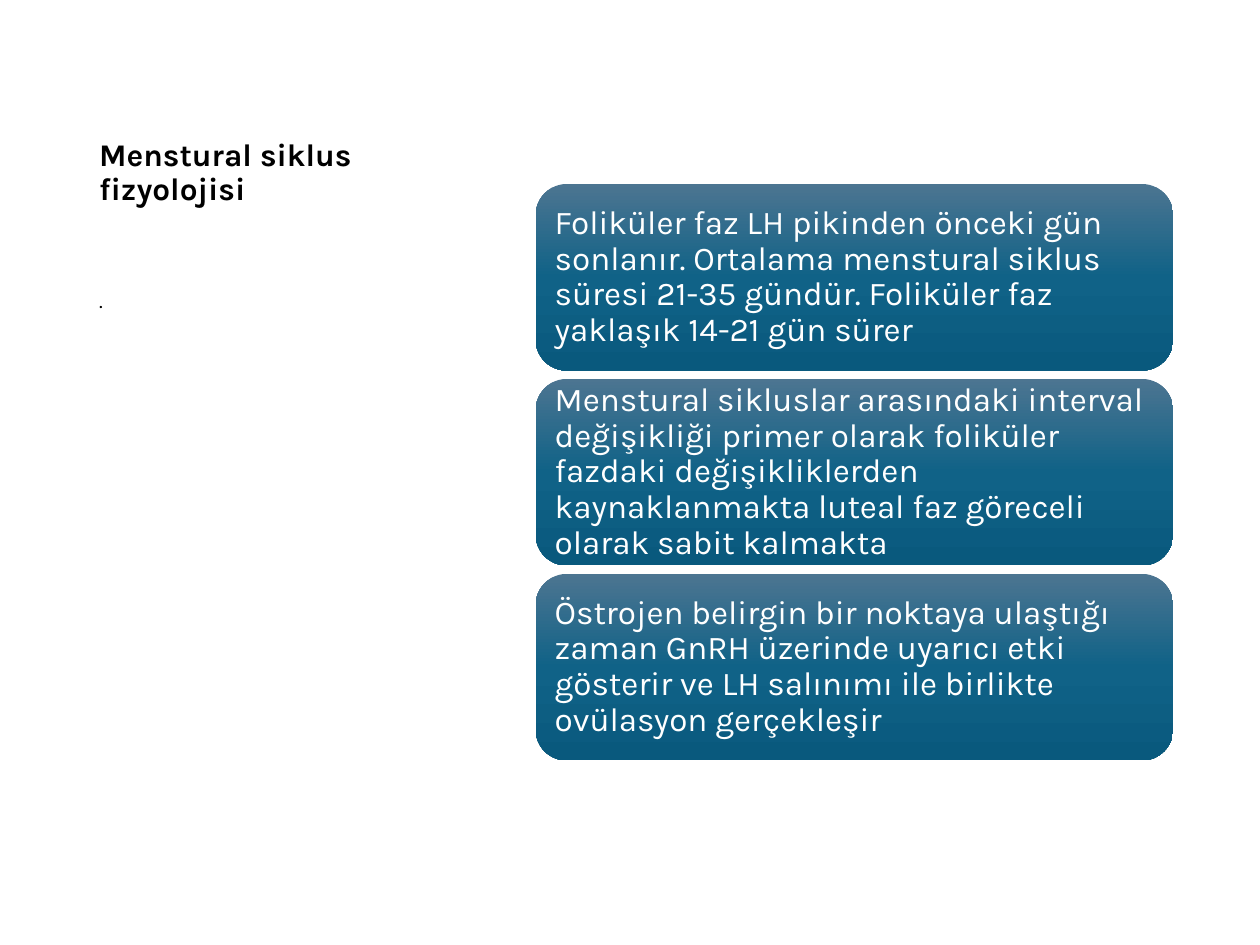
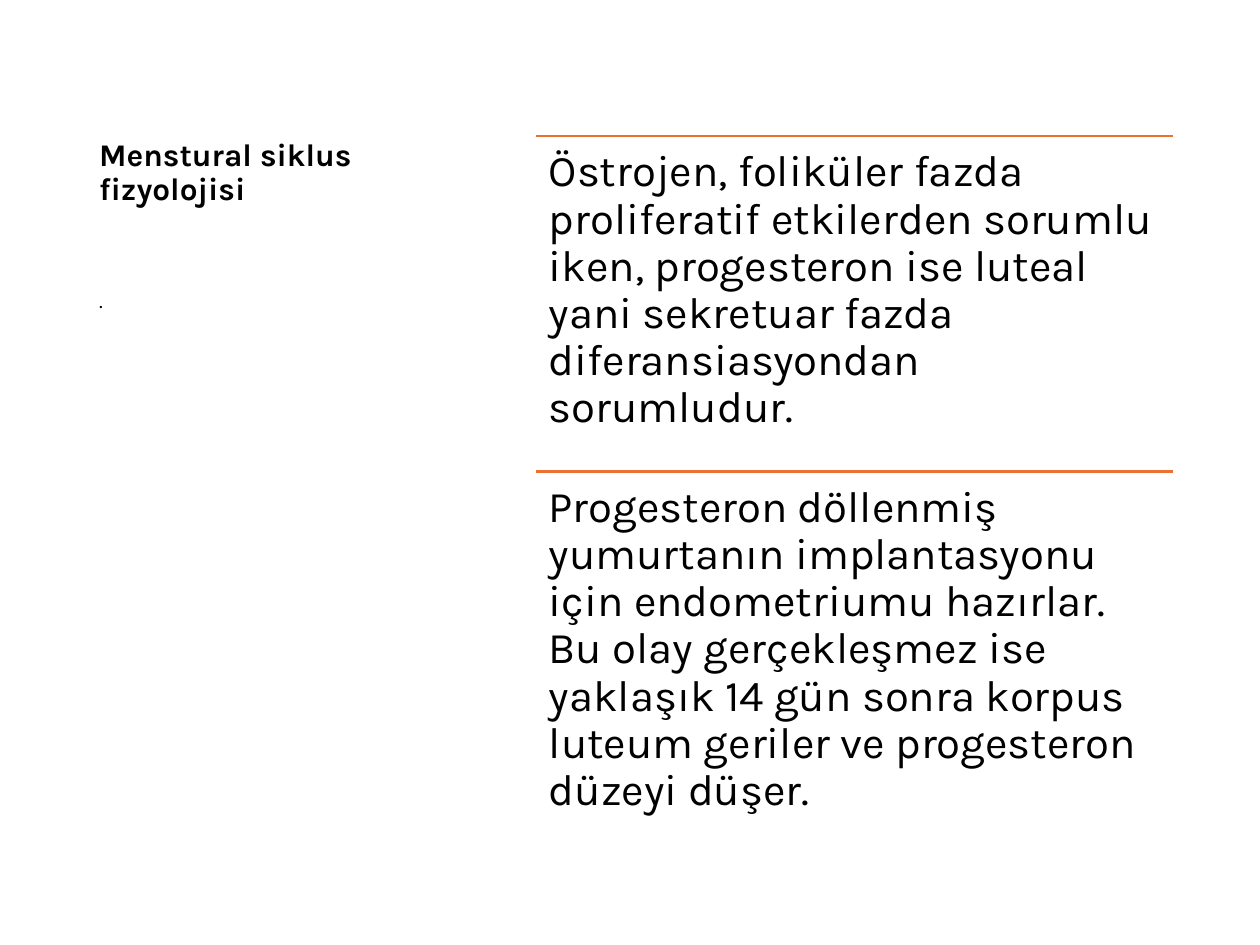
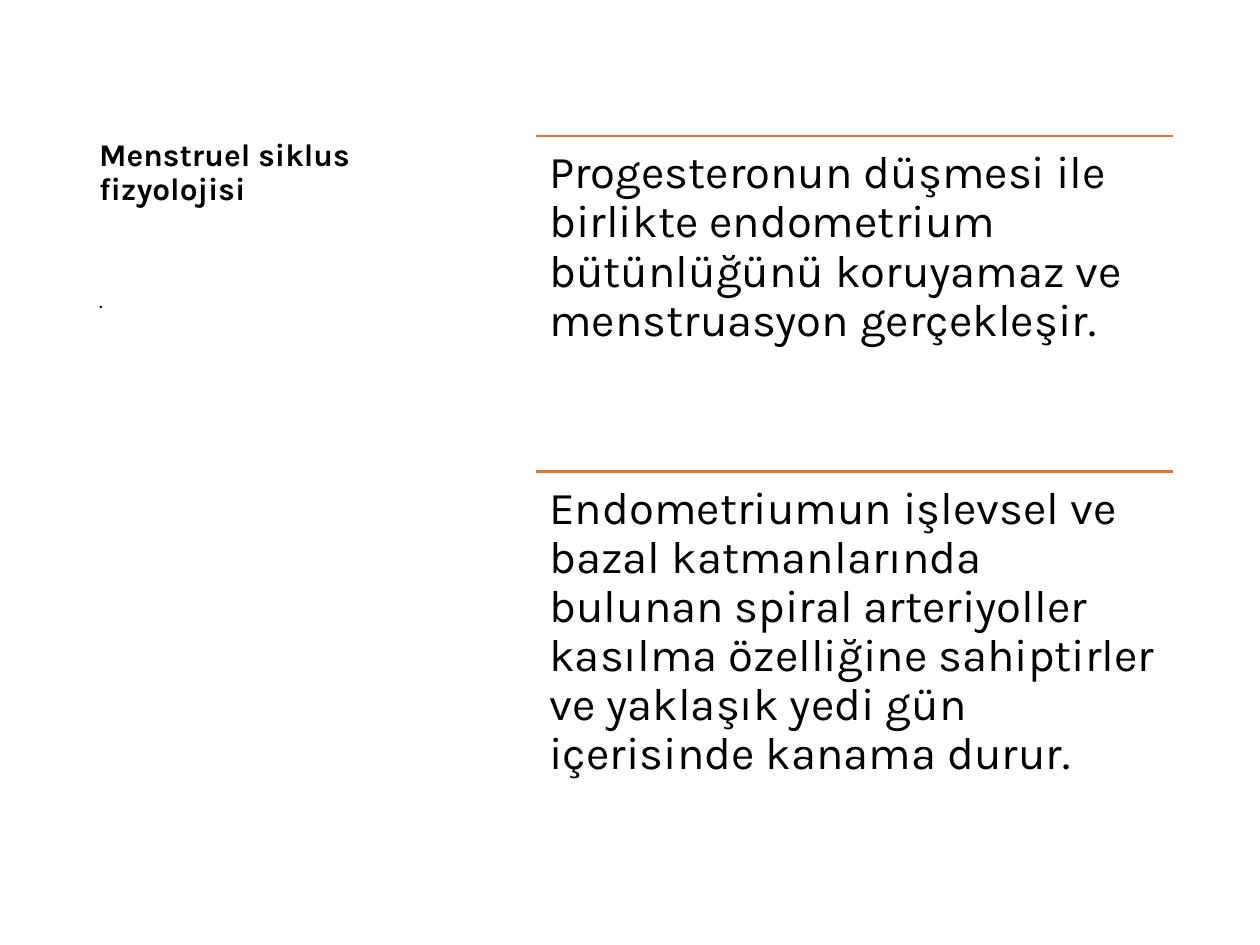
import copy

import pptx
import pptx.dml.color
import pptx.enum.shapes
import pptx.enum.text
import pptx.util
from lxml import etree
from pptx.oxml.ns import qn
from pptx.util import Cm, Pt

SLIDES = [
    {
        "title": "Menstural siklus fizyolojisi",
        "kind": "cards",
        "size": 19,
        "texts": [
            "Foliküler faz LH pikinden önceki gün sonlanır. Ortalama menstural "
            "siklus süresi 21-35 gündür. Foliküler faz yaklaşık 14-21 gün sürer",
            "Menstural sikluslar arasındaki interval değişikliği primer olarak "
            "foliküler fazdaki değişikliklerden kaynaklanmakta luteal faz "
            "göreceli olarak sabit kalmakta",
            "Östrojen belirgin bir noktaya ulaştığı zaman GnRH üzerinde uyarıcı "
            "etki gösterir ve LH salınımı ile birlikte ovülasyon gerçekleşir",
        ],
    },
    {
        "title": "Menstural siklus fizyolojisi",
        "kind": "ruled",
        "size": 25,
        "texts": [
            "Östrojen, foliküler fazda proliferatif etkilerden sorumlu iken, "
            "progesteron ise luteal yani sekretuar fazda diferansiasyondan "
            "sorumludur.",
            "Progesteron döllenmiş yumurtanın implantasyonu için endometriumu "
            "hazırlar. Bu olay gerçekleşmez ise yaklaşık 14 gün sonra korpus "
            "luteum geriler ve progesteron düzeyi düşer.",
        ],
    },
    {
        "title": "Menstruel siklus fizyolojisi",
        "kind": "ruled",
        "size": 26,
        "texts": [
            "Progesteronun düşmesi ile birlikte endometrium bütünlüğünü "
            "koruyamaz ve menstruasyon gerçekleşir.",
            "Endometriumun işlevsel ve bazal katmanlarında bulunan spiral "
            "arteriyoller kasılma özelliğine sahiptirler ve yaklaşık yedi gün "
            "içerisinde kanama durur.",
        ],
    },
]
NOTE = "."

COLORS = {
    "ink": "000000",
    "light": "FFFFFF",
    "rule": "E97132",
    "top": "4C7591",
    "mid": "106287",
    "base": "09597D",
}
FONT = "Karla"
TITLE_BOX = Cm(1.75), Cm(1.27), Cm(8.2), Cm(4.45)
NOTE_BOX = Cm(1.75), Cm(5.72), Cm(8.2), Cm(10.6)
LEFT, WIDTH = Cm(10.8), Cm(12.85)
CARD_TOP, CARD_HIGH, CARD_GAP = Cm(3.71), Cm(3.76), Cm(0.17)
RULE_TOP, RULE_HIGH = Cm(2.74), Cm(6.76)
ANCHOR = pptx.enum.text.MSO_ANCHOR


def rgb(name):
    return pptx.dml.color.RGBColor.from_string(COLORS[name])


def write(shape, text, size, color="ink", bold=False, anchor=ANCHOR.TOP):
    frame = shape.text_frame
    frame.word_wrap = True
    frame.vertical_anchor = anchor
    frame.text = text
    para = frame.paragraphs[0]
    para.alignment = pptx.enum.text.PP_ALIGN.LEFT
    para.line_spacing = 0.9
    font = para.font
    font.name, font.size, font.bold = FONT, Pt(size), bold
    font.color.rgb = rgb(color)
    return frame


def pad(frame, size):
    """Set all four insets to 0.3 of the text size."""
    inset = Pt(0.3 * size)
    frame.margin_left = frame.margin_right = inset
    frame.margin_top = frame.margin_bottom = inset


def shade(shape):
    """Fill from top to base, through a middle stop."""
    fill = shape.fill
    fill.gradient()
    fill.gradient_angle = 270
    stops = shape.element.spPr.find(qn("a:gradFill")).find(qn("a:gsLst"))
    stops.insert(1, copy.deepcopy(stops[0]))
    marks = zip(fill.gradient_stops, ("top", "mid", "base"), (0, 0.5, 1))
    for stop, name, place in marks:
        stop.color.rgb = rgb(name)
        stop.position = place


def cards(slide, texts, size):
    for i, text in enumerate(texts):
        top = CARD_TOP + i * (CARD_HIGH + CARD_GAP)
        card = slide.shapes.add_shape(
            pptx.enum.shapes.MSO_SHAPE.ROUNDED_RECTANGLE,
            LEFT, top, WIDTH, CARD_HIGH)
        card.shadow.inherit = False
        card.line.fill.background()
        shade(card)
        pad(write(card, text, size, "light", anchor=ANCHOR.MIDDLE), size)


def ruled(slide, texts, size):
    for i, text in enumerate(texts):
        top = RULE_TOP + i * RULE_HIGH
        rule = slide.shapes.add_connector(
            pptx.enum.shapes.MSO_CONNECTOR.STRAIGHT,
            LEFT, top, LEFT + WIDTH, top)
        rule.line.color.rgb = rgb("rule")
        rule.line.width = Pt(1.5)
        etree.SubElement(rule.element.spPr, qn("a:effectLst"))
        box = slide.shapes.add_textbox(LEFT, top, WIDTH, RULE_HIGH)
        pad(write(box, text, size), size)


def main():
    deck = pptx.Presentation()
    deck.slide_width, deck.slide_height = Cm(25.4), Cm(19.05)
    draw = {"cards": cards, "ruled": ruled}
    for item in SLIDES:
        slide = deck.slides.add_slide(deck.slide_layouts[6])
        write(slide.shapes.add_textbox(*TITLE_BOX), item["title"], 18,
              bold=True, anchor=ANCHOR.MIDDLE)
        draw[item["kind"]](slide, item["texts"], item["size"])
        write(slide.shapes.add_textbox(*NOTE_BOX), NOTE, 12)
    deck.save("out.pptx")


if __name__ == "__main__":
    main()
